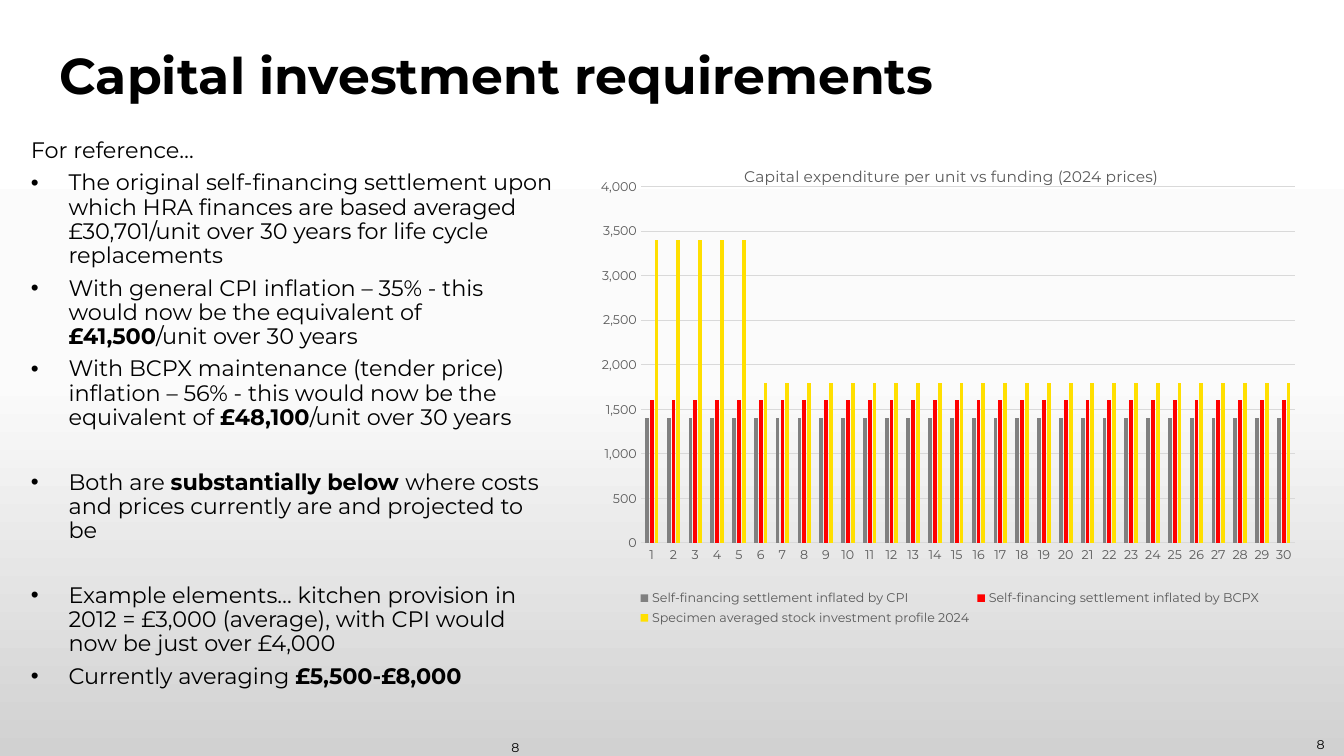
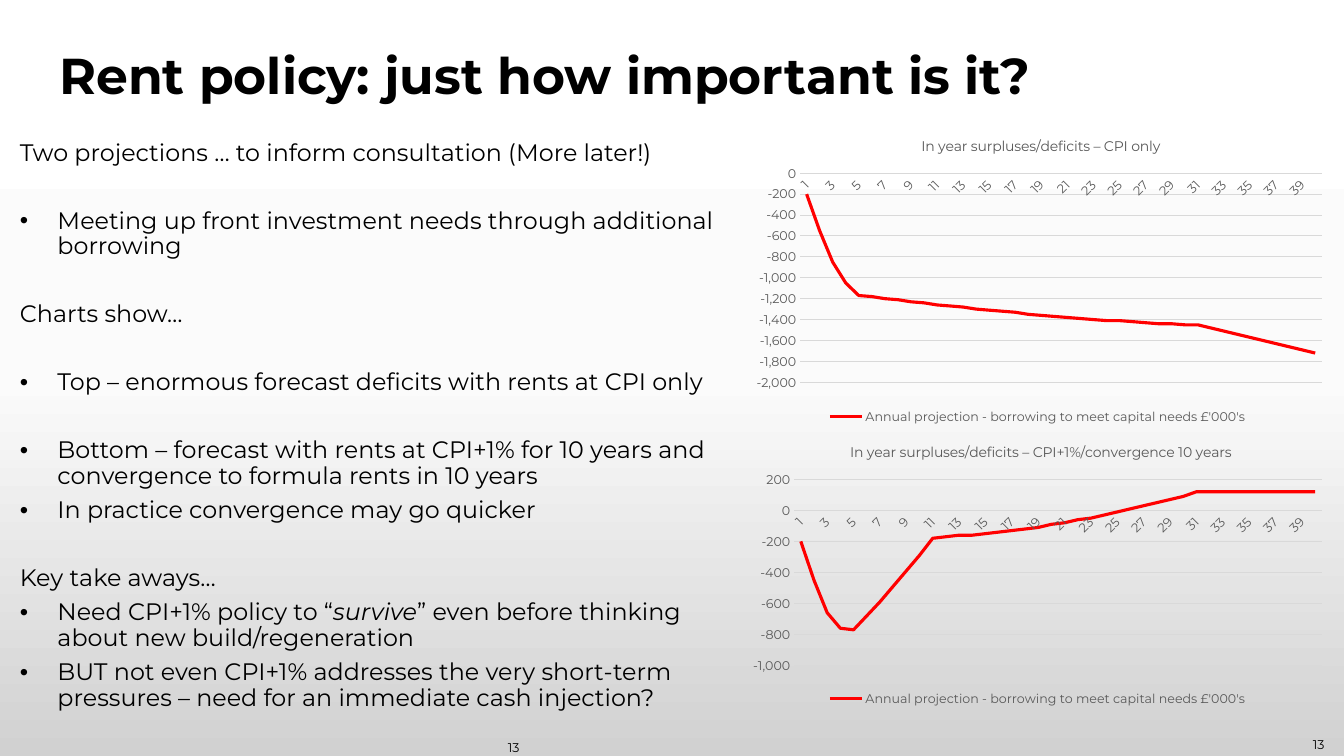
"""Build two slides on housing capital investment and rent policy."""
import copy
from dataclasses import dataclass

from lxml import etree
from pptx import Presentation
from pptx import util as u
from pptx.chart.data import CategoryChartData
from pptx.dml.color import RGBColor
from pptx.enum import chart as ch
from pptx.enum import text
from pptx.oxml.ns import qn


@dataclass(frozen=True)
class Theme:
    """Hold the colours and type sizes of the deck."""
    font: str = "Montserrat"
    ink: str = "000000"
    muted: str = "595959"
    rule: str = "D9D9D9"
    grey: str = "808080"
    red: str = "FF0000"
    yellow: str = "FFDF00"
    backdrop: tuple = ((0, "FFFFFF"), (0.5, "FBFBFB"), (1, "D1D1D1"))
    title_size: float = 36
    number_size: float = 9
    chart_size: float = 9


THEME = Theme()


@dataclass(frozen=True)
class Point:
    """Describe one paragraph of body text."""
    words: str
    bullet: bool = True
    gap: bool = False
    bold: str = ""
    italic: str = ""


@dataclass(frozen=True)
class ChartStyle:
    """Describe the title, scale and layout of one chart."""
    title: str
    title_size: float
    title_at: tuple
    plot_at: tuple
    scale: tuple


FUNDING_POINTS = [
    Point("For reference…", bullet=False),
    Point("The original self-financing settlement upon which HRA finances are based "
          "averaged £30,701/unit over 30 years for life cycle replacements"),
    Point("With general CPI inflation – 35% - this would now be the equivalent of "
          "£41,500/unit over 30 years", bold="£41,500"),
    Point("With BCPX maintenance (tender price) inflation – 56% - this would now be the "
          "equivalent of £48,100/unit over 30 years", bold="£48,100"),
    Point("Both are substantially below where costs and prices currently are and "
          "projected to be", gap=True, bold="substantially below "),
    Point("Example elements… kitchen provision in 2012 = £3,000 (average), with CPI "
          "would now be just over £4,000", gap=True),
    Point("Currently averaging £5,500-£8,000", bold="£5,500-£8,000"),
]

RENT_POINTS = [
    Point("Two projections … to inform consultation (More later!)", bullet=False),
    Point("Meeting up front investment needs through additional borrowing", gap=True),
    Point("Charts show…", bullet=False, gap=True),
    Point("Top – enormous forecast deficits with rents at CPI only", gap=True),
    Point("Bottom – forecast with rents at CPI+1% for 10 years and convergence to "
          "formula rents in 10 years", gap=True),
    Point("In practice convergence may go quicker"),
    Point("Key take aways…", bullet=False, gap=True),
    Point("Need CPI+1% policy to “survive” even before thinking about new "
          "build/regeneration", italic="survive"),
    Point("BUT not even CPI+1% addresses the very short-term pressures – need for an "
          "immediate cash injection?"),
]

FUNDING_SERIES = [
    ("Self-financing settlement inflated by CPI", [1400] * 30, THEME.grey),
    ("Self-financing settlement inflated by BCPX", [1600] * 30, THEME.red),
    ("Specimen averaged stock investment profile 2024",
     [3400] * 5 + [1800] * 25, THEME.yellow),
]

PROJECTION = "Annual projection - borrowing to meet capital needs £'000's"
CPI_ONLY = [
    -200, -550, -850, -1050, -1170, -1180, -1200, -1210, -1230, -1240,
    -1260, -1270, -1280, -1300, -1310, -1320, -1330, -1350, -1360, -1370,
    -1380, -1390, -1400, -1410, -1410, -1420, -1430, -1440, -1440, -1450,
    -1450, -1480, -1510, -1540, -1570, -1600, -1630, -1660, -1690, -1720,
]
CONVERGENCE = [
    -200, -450, -660, -760, -770, -680, -590, -490, -390, -290,
    -180, -170, -160, -160, -150, -140, -130, -120, -110, -90,
    -80, -60, -50, -30, -10, 10, 30, 50, 70, 90,
] + [120] * 10


def cm(*lengths):
    """Turn numbers into centimetre lengths."""
    return [u.Cm(length) for length in lengths]


def style_font(font, size, colour, bold=False):
    """Apply the deck typeface with a size and colour."""
    font.name, font.size, font.bold = THEME.font, u.Pt(size), bold
    font.color.rgb = RGBColor.from_string(colour)


def style_line(line, colour, width):
    """Give a line a colour and a width in points."""
    line.color.rgb = RGBColor.from_string(colour)
    line.width = u.Pt(width)


def set_backdrop(master):
    """Paint the shared vertical gradient on the slide master."""
    fill = master.background.fill
    fill.gradient()
    fill.gradient_angle = 270
    first = next(master.element.iter(qn("a:gs")))
    first.addnext(copy.deepcopy(first))
    for stop, (position, colour) in zip(fill.gradient_stops, THEME.backdrop):
        stop.position = position
        stop.color.rgb = RGBColor.from_string(colour)


def add_number(page, number, left, top):
    """Add a right-aligned page number."""
    box = page.shapes.add_textbox(*cm(left, top, 1.3, 0.58))
    frame = box.text_frame
    frame.word_wrap = True
    frame.vertical_anchor = text.MSO_ANCHOR.MIDDLE
    para = frame.paragraphs[0]
    para.text = number
    para.alignment = text.PP_ALIGN.RIGHT
    style_font(para.font, THEME.number_size, THEME.ink)


def add_page(deck, title, number):
    """Add a page with its title and both page numbers."""
    page = deck.slides.add_slide(deck.slide_layouts.get_by_name("Title Only"))
    box = page.shapes.title
    box.left, box.top, box.width, box.height = cm(1.24, 1.2, 28.68, 1.55)
    box.text_frame.vertical_anchor = text.MSO_ANCHOR.MIDDLE
    para = box.text_frame.paragraphs[0]
    para.text = title
    para.alignment = text.PP_ALIGN.LEFT
    para.line_spacing = 0.9
    style_font(para.font, THEME.title_size, THEME.ink, bold=True)
    add_number(page, number, 32.33, 18.47)
    add_number(page, number, 12.04, 18.54)
    return page


def add_bullet(para):
    """Give a paragraph a hanging round bullet."""
    props = para._p.get_or_add_pPr()
    indent = u.Cm(0.95)
    props.set("marL", str(indent))
    props.set("indent", str(-indent))
    colour = etree.SubElement(props, qn("a:buClr"))
    etree.SubElement(colour, qn("a:srgbClr"), val=THEME.ink)
    etree.SubElement(props, qn("a:buFont"), typeface="Arial")
    etree.SubElement(props, qn("a:buChar"), char="•")


def add_spans(para, point):
    """Write the words, with the emphasised part as its own span."""
    emphasis = point.bold or point.italic
    parts = point.words.partition(emphasis) if emphasis else (point.words,)
    for part in filter(None, parts):
        span = para.add_run()
        span.text = part
        if part == emphasis:
            span.font.bold = bool(point.bold)
            span.font.italic = bool(point.italic)


def add_points(page, place, points, size):
    """Add the body text as spaced paragraphs."""
    frame = page.shapes.add_textbox(*cm(*place)).text_frame
    frame.word_wrap = True
    for index, point in enumerate(points):
        para = frame.add_paragraph() if index else frame.paragraphs[0]
        para.line_spacing = 0.9
        para.space_after = u.Pt(6)
        if point.gap:
            para.space_before = u.Pt(round(1.07 * size + 6, 1))
        if point.bullet:
            add_bullet(para)
        style_font(para.font, size, THEME.ink)
        add_spans(para, point)


def set_layout(chart, tag, index, **settings):
    """Fix the place of a chart part as fractions of the chart."""
    parent = next(chart._chartSpace.iter(qn(tag)))
    for old in parent.findall(qn("c:layout")):
        parent.remove(old)
    layout = etree.Element(qn("c:layout"))
    manual = etree.SubElement(layout, qn("c:manualLayout"))
    for name, value in settings.items():
        etree.SubElement(manual, qn(f"c:{name}"), val=str(value))
    parent.insert(index, layout)


def style_axes(chart, scale):
    """Format both axes and the gridlines."""
    category, value = chart.category_axis, chart.value_axis
    for axis in (category, value):
        axis.major_tick_mark = axis.minor_tick_mark = ch.XL_TICK_MARK.NONE
        style_font(axis.tick_labels.font, THEME.chart_size, THEME.muted)
    style_line(category.format.line, THEME.rule, 0.75)
    value.format.line.fill.background()
    value.has_major_gridlines = True
    style_line(value.major_gridlines.format.line, THEME.rule, 0.75)
    value.minimum_scale, value.maximum_scale, value.major_unit = scale
    value.tick_labels.number_format = "#,##0"
    value.tick_labels.number_format_is_linked = False


def add_chart(page, kind, place, series, style):
    """Add a chart with its title, axes and bottom legend."""
    data = CategoryChartData()
    data.categories = [str(year + 1) for year in range(len(series[0][1]))]
    for name, values, _ in series:
        data.add_series(name, values)
    chart = page.shapes.add_chart(kind, *cm(*place), data).chart
    style_font(chart.font, THEME.chart_size, THEME.muted)

    chart.has_title = True
    para = chart.chart_title.text_frame.paragraphs[0]
    para.text = style.title
    style_font(para.font, style.title_size, THEME.muted)
    left, top = style.title_at
    set_layout(chart, "c:title", 1, xMode="edge", yMode="edge", x=left, y=top)
    left, top, width, height = style.plot_at
    set_layout(chart, "c:plotArea", 0, layoutTarget="inner", xMode="edge",
               yMode="edge", x=left, y=top, w=width, h=height)

    chart.has_legend = True
    chart.legend.position = ch.XL_LEGEND_POSITION.BOTTOM
    chart.legend.include_in_layout = False
    style_font(chart.legend.font, THEME.chart_size, THEME.muted)
    style_axes(chart, style.scale)
    chart.plots[0].vary_by_categories = False
    return chart


def add_columns(page, place, series, style):
    """Add a clustered column chart."""
    chart = add_chart(page, ch.XL_CHART_TYPE.COLUMN_CLUSTERED, place, series, style)
    plot = chart.plots[0]
    plot.gap_width, plot.overlap = 219, -27
    for column, (_, _, colour) in zip(plot.series, series):
        column.format.fill.solid()
        column.format.fill.fore_color.rgb = RGBColor.from_string(colour)


def add_projection(page, place, values, style):
    """Add a line chart with slanted labels on every second year."""
    series = [(PROJECTION, values, THEME.red)]
    chart = add_chart(page, ch.XL_CHART_TYPE.LINE, place, series, style)
    line = chart.plots[0].series[0]
    line.smooth = False
    style_line(line.format.line, THEME.red, 2.25)
    axis = next(chart._chartSpace.iter(qn("c:catAx")))
    next(axis.iter(qn("a:bodyPr"))).set("rot", "-2700000")
    skip = etree.Element(qn("c:tickLblSkip"), val="2")
    axis.find(qn("c:noMultiLvlLbl")).addprevious(skip)


def main():
    """Build and save the deck."""
    deck = Presentation()
    deck.slide_width, deck.slide_height = cm(33.87, 19.05)
    set_backdrop(deck.slide_master)

    page = add_page(deck, "Capital investment requirements", "8")
    add_points(page, (0.53, 3.38, 13.67, 14.02), FUNDING_POINTS, 16)
    add_columns(page, (14.88, 3.73, 18.11, 12.14), FUNDING_SERIES, ChartStyle(
        "Capital expenditure per unit vs funding (2024 prices)", 11,
        (0.21, 0.03), (0.07, 0.08, 0.91, 0.74), (0, 4000, 500)))

    page = add_page(deck, "Rent policy: just how important is it?", "13")
    add_points(page, (0.25, 3.42, 18.42, 15.01), RENT_POINTS, 17)
    add_projection(page, (18.67, 3.05, 14.94, 7.75), CPI_ONLY, ChartStyle(
        "In year surpluses/deficits – CPI only", 10,
        (0.3, 0.04), (0.1, 0.17, 0.88, 0.68), (-2000, 0, 200)))
    add_projection(page, (18.67, 10.8, 14.94, 7.11), CONVERGENCE, ChartStyle(
        "In year surpluses/deficits – CPI+1%/convergence 10 years", 10,
        (0.18, 0.04), (0.09, 0.18, 0.89, 0.66), (-1000, 200, 200)))
    deck.save("out.pptx")


if __name__ == "__main__":
    main()
